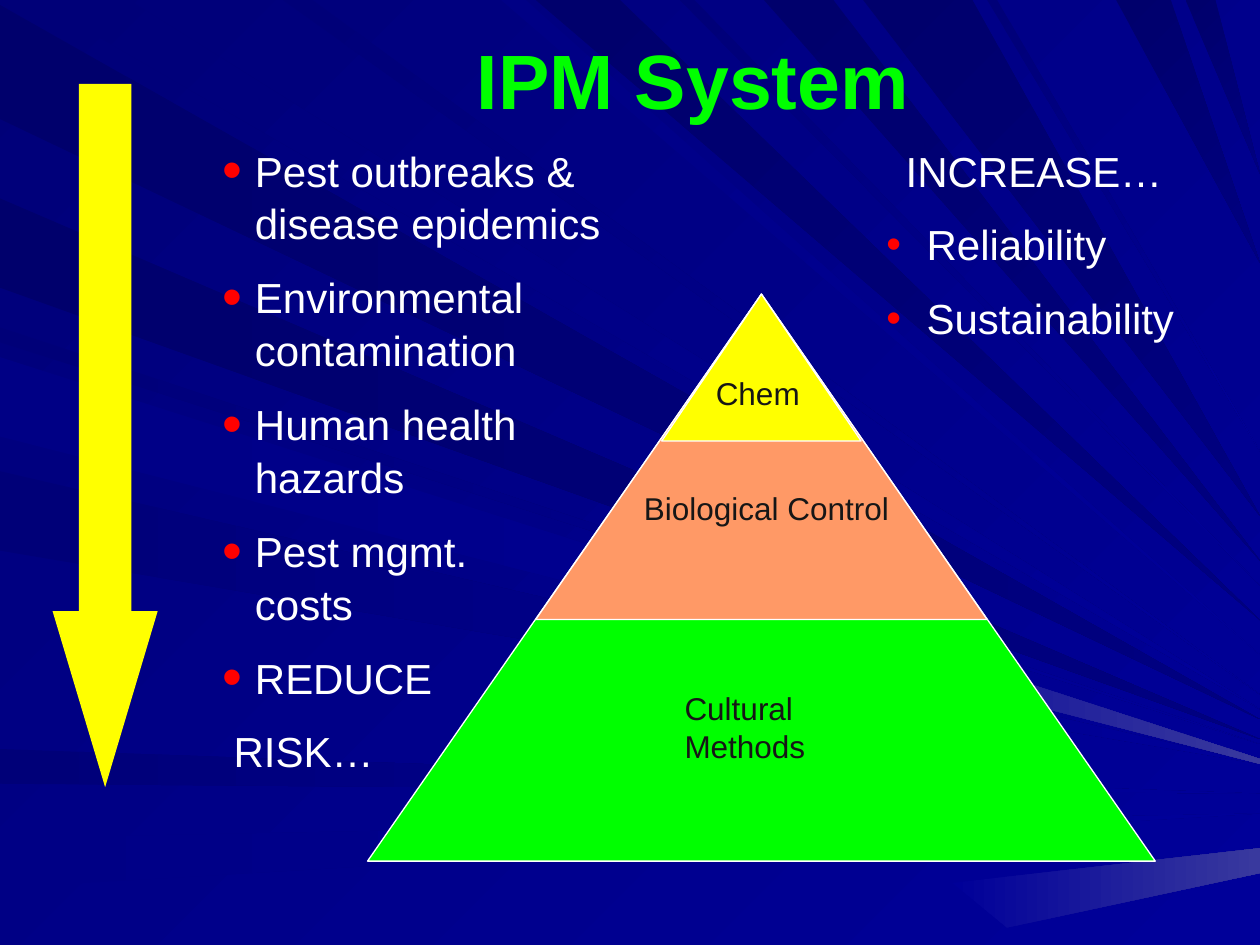
import pptx
import pptx.enum.shapes
import pptx.enum.text
import pptx.oxml
import pptx.oxml.ns
import pptx.util
from pptx.dml.color import RGBColor
from pptx.util import Cm

WHITE = RGBColor(0xFF, 0xFF, 0xFF)
YELLOW = RGBColor(0xFF, 0xFF, 0x00)
GREEN = RGBColor(0x00, 0xFF, 0x00)
ORANGE = RGBColor(0xFF, 0x99, 0x66)
INK = RGBColor(0x16, 0x16, 0x16)
RED = RGBColor(0xFF, 0x00, 0x00)
NIGHT = RGBColor(0x00, 0x00, 0x6C)
DUSK = RGBColor(0x00, 0x00, 0x78)
DEEP = RGBColor(0x00, 0x00, 0x80)
TWILIGHT = RGBColor(0x00, 0x00, 0x85)
ROYAL = RGBColor(0x00, 0x00, 0x99)
HAZE = RGBColor(0x39, 0x39, 0x9E)

FONT = "Arial"
SLIDE_WIDTH, SLIDE_HEIGHT = 25.4, 19.05

SHADOW = (NIGHT, DEEP)
BEAM = (DUSK, ROYAL)
GLOW = (TWILIGHT, ROYAL)
GLINT = (ROYAL, HAZE)

LEFT_RAYS = [
    (0.1, 2.4, 14.5, SHADOW),
    (15.1, 15.8, 16, BEAM),
    (16.9, 17.9, 16.4, GLOW),
    (6.6, 6.9, 15, BEAM),
    (4, 5.8, 14.9, SHADOW),
    (9.5, 11.1, 15.4, BEAM),
    (7.2, 8.8, 15.3, GLOW),
]
TOP_RAYS = [
    (0.7, 2.6, 14.3, BEAM),
    (5.7, 6.3, 14, BEAM),
    (10.1, 10.6, 13.2, GLOW),
    (10.8, 12.5, 12.5, SHADOW),
    (13.7, 14, 11.8, BEAM),
    (15.4, 16.8, 11.3, SHADOW),
    (17.4, 19.6, 10.4, SHADOW),
    (19.9, 20.1, 9.1, BEAM),
    (22.5, 23.6, 5.3, SHADOW),
    (23.9, 24.5, 3.5, SHADOW),
]
GLINTS = [
    [(16.2, 12.3), (16.1, 13), (SLIDE_WIDTH, 15.4), (SLIDE_WIDTH, 15.3)],
    [(19.2, 17.8), (20.3, 18.7), (SLIDE_WIDTH, 17.6), (SLIDE_WIDTH, 17.1)],
]

RISKS = [
    "Pest outbreaks & disease epidemics",
    "Environmental contamination",
    "Human health hazards",
    "Pest mgmt.\vcosts",
    "REDUCE",
    "RISK…",
]
BENEFITS = ["INCREASE…", "Reliability", "Sustainability"]

APEX = (15.35, 5.93)
TIERS = [(15.88, 11.43, GREEN), (9.1, 6.56, ORANGE), (4.02, 2.96, YELLOW)]
LABELS = [
    ("Cultural Methods", (13.55, 13.76, 3.81, 1.8), False),
    ("Biological Control", (12.7, 9.74, 5.5, 1.02), True),
    ("Chem", (14.18, 7.41, 2.96, 1.02), False),
]


def set_gradient(fill, colors, angle):
    fill.gradient()
    fill.gradient_angle = -angle % 360
    for stop, color in zip(fill.gradient_stops, colors):
        stop.color.rgb = color


def add_ray(slide, points, colors, angle):
    corners = [(Cm(x), Cm(y)) for x, y in points]
    builder = slide.shapes.build_freeform(*corners[0])
    builder.add_line_segments(corners[1:], close=True)
    shape = builder.convert_to_shape()
    shape.shadow.inherit = False
    shape.line.fill.background()
    set_gradient(shape.fill, colors, angle)


def add_rays(slide):
    for start, end, tip, colors in LEFT_RAYS:
        add_ray(slide, [(0, start), (0, end), (SLIDE_WIDTH, tip)], colors, 0)
    for start, end, tip, colors in TOP_RAYS:
        add_ray(slide, [(start, 0), (end, 0), (SLIDE_WIDTH, tip)], colors, 45)
    for points in GLINTS:
        add_ray(slide, points, GLINT, 0)


def add_preset(slide, kind, box, color, outlined):
    shape = slide.shapes.add_shape(kind, *map(Cm, box))
    shape.shadow.inherit = False
    shape.fill.solid()
    shape.fill.fore_color.rgb = color
    if outlined:
        shape.line.color.rgb = WHITE
        shape.line.width = pptx.util.Pt(0.75)
    else:
        shape.line.fill.background()
    return shape


def add_text(slide, texts, box, size, color, centered=False, bold=False):
    text_frame = slide.shapes.add_textbox(*map(Cm, box)).text_frame
    text_frame.word_wrap = True
    text_frame.text = "\n".join(texts)
    for paragraph in text_frame.paragraphs:
        if centered:
            paragraph.alignment = pptx.enum.text.PP_ALIGN.CENTER
        for run in paragraph.runs:
            run.font.name = FONT
            run.font.size = pptx.util.Pt(size)
            run.font.bold = bold
            run.font.color.rgb = color
    return text_frame


def space_list(text_frame):
    for index, paragraph in enumerate(text_frame.paragraphs):
        paragraph.line_spacing = 1.05
        if index:
            paragraph.space_before = pptx.util.Pt(12)


def set_bullet(paragraph, margin, hanging, percent):
    properties = paragraph._p.get_or_add_pPr()
    properties.set("marL", str(Cm(margin)))
    properties.set("indent", str(-Cm(hanging)))
    namespace = pptx.oxml.ns.nsdecls("a")
    for element in (
        f'<a:buClr {namespace}><a:srgbClr val="{RED}"/></a:buClr>',
        f'<a:buSzPct {namespace} val="{percent * 1000}"/>',
        f'<a:buFont {namespace} typeface="{FONT}"/>',
        f'<a:buChar {namespace} char="•"/>',
    ):
        properties.append(pptx.oxml.parse_xml(element))


def main():
    presentation = pptx.Presentation()
    presentation.slide_width = Cm(SLIDE_WIDTH)
    presentation.slide_height = Cm(SLIDE_HEIGHT)
    slide = presentation.slides.add_slide(presentation.slide_layouts[6])
    set_gradient(slide.background.fill, BEAM, 45)
    add_rays(slide)

    shape_kinds = pptx.enum.shapes.MSO_SHAPE
    arrow = add_preset(slide, shape_kinds.DOWN_ARROW, (1.06, 1.69, 2.12, 14.18), YELLOW, False)
    arrow.adjustments[1] = 1.675

    risks = add_text(slide, RISKS, (4.23, 2.75, 9.31, 14.63), 24, WHITE)
    space_list(risks)
    for paragraph in risks.paragraphs[:-1]:
        set_bullet(paragraph, 0.66, 0.66, 135)
    risks.paragraphs[-1]._p.get_or_add_pPr().set("marL", str(Cm(0.23)))

    title = add_text(slide, ["IPM System"], (7.41, 0, 13.13, 3.18), 44, GREEN, True, True)
    title.vertical_anchor = pptx.enum.text.MSO_ANCHOR.MIDDLE

    benefits = add_text(slide, BENEFITS, (16.93, 2.75, 7.83, 4.37), 24, WHITE)
    space_list(benefits)
    benefits.paragraphs[0].alignment = pptx.enum.text.PP_ALIGN.CENTER
    for paragraph in benefits.paragraphs[1:]:
        set_bullet(paragraph, 1.5, 0.81, 100)

    apex_x, apex_y = APEX
    for width, height, color in TIERS:
        box = (apex_x - width / 2, apex_y, width, height)
        add_preset(slide, shape_kinds.ISOSCELES_TRIANGLE, box, color, True)
    for text, box, centered in LABELS:
        add_text(slide, [text], box, 18, INK, centered)

    presentation.save("out.pptx")


if __name__ == "__main__":
    main()
